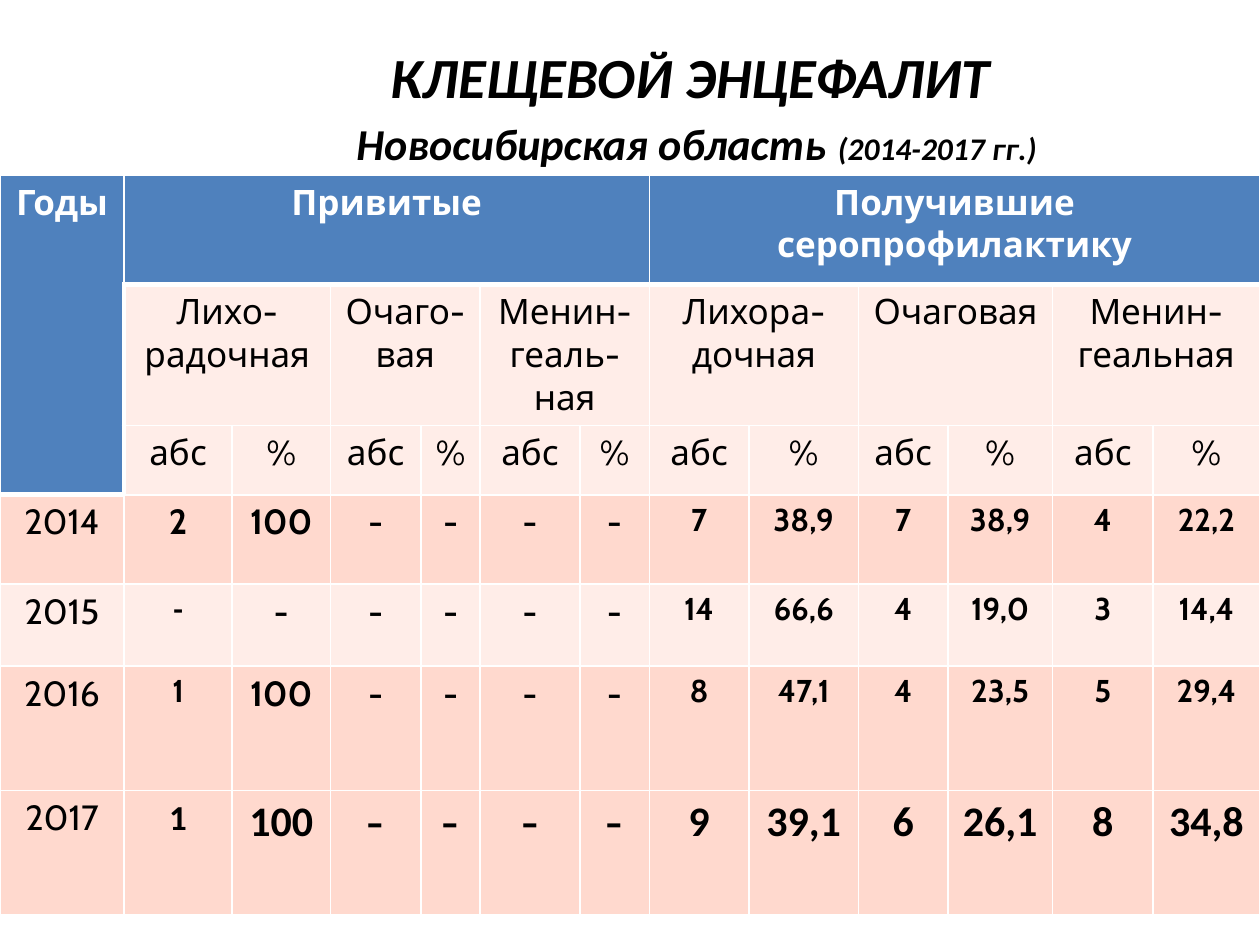
from lxml.etree import SubElement
from pptx import Presentation
from pptx.dml.color import RGBColor
from pptx.enum.text import MSO_ANCHOR, MSO_AUTO_SIZE, PP_ALIGN
from pptx.oxml.ns import qn
from pptx.util import Cm, Pt

# Content
TITLE_LINES = [
    [("КЛЕЩЕВОЙ ЭНЦЕФАЛИТ ", 32.4)],
    [("Новосибирская область", 25.2), (" ", 28.8), ("(2014-2017 гг.)", 18)],
]
YEAR_HEADING = "Годы"
GROUPS = [
    ("Привитые", ["Лихо-радочная", "Очаго-вая", "Менин-геаль-ная"]),
    ("Получившие серопрофилактику", ["Лихора-дочная", "Очаговая", "Менин-геальная"]),
]
MEASURES = ["абс", "%"]
YEARS = [
    ["2014", "2", "100", "-", "-", "-", "-", "7", "38,9", "7", "38,9", "4", "22,2"],
    ["2015", "-", "-", "-", "-", "-", "-", "14", "66,6", "4", "19,0", "3", "14,4"],
    ["2016", "1", "100", "-", "-", "-", "-", "8", "47,1", "4", "23,5", "5", "29,4"],
    ["2017", "1", "100", "-", "-", "-", "-", "9", "39,1", "6", "26,1", "8", "34,8"],
]

# Sizes in centimetres
COLUMN_WIDTHS = [2.5, 2.18, 1.98, 1.83, 1.19, 2.01, 1.4, 2.01, 2.21, 1.8, 2.11, 2.03, 2.15]
ROW_HEIGHTS = [2.21, 2.79, 1.4, 1.8, 1.65, 2.51, 2.51]
HEADER_ROWS = 3

# Style
BLUE = RGBColor(0x4F, 0x81, 0xBD)
PALE = RGBColor(0xFF, 0xED, 0xE8)
PINK = RGBColor(0xFF, 0xD9, 0xCE)
WHITE = RGBColor(0xFF, 0xFF, 0xFF)
BLACK = RGBColor(0, 0, 0)
YEAR_FILLS = [PINK, PALE, PINK, PINK]
TABLE_FONT, TITLE_FONT = "Cabin", "Calibri"
# Exceptions to the body style: (year, column) -> (font, size)
SPECIAL = {
    ("2015", 1): (TITLE_FONT, 18),
    ("2016", 1): (TABLE_FONT, 18),
    ("2017", 1): (TITLE_FONT, 20),
}


def format_run(run, font, size, color=BLACK, bold=False, italic=False):
    run.font.name = font
    run.font.size = Pt(size)
    run.font.color.rgb = color
    run.font.bold = bold
    run.font.italic = italic


def write_cell(cell, text, font=TABLE_FONT, size=20, color=BLACK, bold=False):
    cell.text_frame.text = text
    paragraph = cell.text_frame.paragraphs[0]
    paragraph.alignment = PP_ALIGN.CENTER
    format_run(paragraph.runs[0], font, size, color, bold)


def style_cell(cell, fill, left=1, top=1, bottom=1):
    properties = cell._tc.get_or_add_tcPr()
    for tag, width in (("a:lnL", left), ("a:lnR", 1), ("a:lnT", top), ("a:lnB", bottom)):
        line = SubElement(properties, qn(tag), w=str(Pt(width)))
        solid = SubElement(line, qn("a:solidFill"))
        SubElement(solid, qn("a:srgbClr"), val=str(WHITE))
    cell.fill.solid()
    cell.fill.fore_color.rgb = fill


def value_style(year, column, text):
    if (year, column) in SPECIAL:
        return SPECIAL[year, column]
    if year == "2017":
        return (TABLE_FONT if text == "-" else TITLE_FONT), 24
    return TABLE_FONT, 18 if column > 6 else 20


presentation = Presentation()
presentation.slide_width, presentation.slide_height = Cm(25.4), Cm(19.05)
slide = presentation.slides.add_slide(presentation.slide_layouts[5])

# Title
title = slide.shapes.title
title.left, title.top, title.width, title.height = Cm(2.69), Cm(0.76), Cm(22.71), Cm(2.77)
title.text_frame.auto_size = MSO_AUTO_SIZE.NONE
title.text_frame.vertical_anchor = MSO_ANCHOR.MIDDLE
paragraph = title.text_frame.paragraphs[0]
paragraph.alignment = PP_ALIGN.CENTER
for index, line in enumerate(TITLE_LINES):
    if index:
        paragraph.add_line_break()
    for text, size in line:
        run = paragraph.add_run()
        run.text = text
        format_run(run, TITLE_FONT, size, bold=True, italic=True)

# Table grid
table = slide.shapes.add_table(
    len(ROW_HEIGHTS), len(COLUMN_WIDTHS), 0, Cm(3.53),
    Cm(sum(COLUMN_WIDTHS)), Cm(sum(ROW_HEIGHTS))).table
for column, width in zip(table.columns, COLUMN_WIDTHS):
    column.width = Cm(width)
for row, height in zip(table.rows, ROW_HEIGHTS):
    row.height = Cm(height)

# Fills and borders
for row in range(len(ROW_HEIGHTS)):
    for column in range(len(COLUMN_WIDTHS)):
        cell = table.cell(row, column)
        if row >= HEADER_ROWS:
            under_heading = row == HEADER_ROWS and column == 0
            style_cell(cell, YEAR_FILLS[row - HEADER_ROWS], top=3 if under_heading else 1)
        elif row == 0 or column == 0:
            style_cell(cell, BLUE, bottom=3)
        else:
            style_cell(cell, PALE, left=3 if column == 1 else 1, top=3 if row == 1 else 1)

# Headings
table.cell(0, 0).merge(table.cell(HEADER_ROWS - 1, 0))
write_cell(table.cell(0, 0), YEAR_HEADING, color=WHITE, bold=True)
column = 1
for group, forms in GROUPS:
    group_cell = table.cell(0, column)
    group_cell.merge(table.cell(0, column + len(forms) * len(MEASURES) - 1))
    write_cell(group_cell, group, color=WHITE, bold=True)
    for form in forms:
        form_cell = table.cell(1, column)
        form_cell.merge(table.cell(1, column + len(MEASURES) - 1))
        write_cell(form_cell, form)
        for measure in MEASURES:
            write_cell(table.cell(2, column), measure)
            column += 1

# Yearly values
for row, values in enumerate(YEARS, HEADER_ROWS):
    year = values[0]
    write_cell(table.cell(row, 0), year)
    for column, text in enumerate(values[1:], 1):
        font, size = value_style(year, column, text)
        write_cell(table.cell(row, column), text, font, size, bold=True)

presentation.save("out.pptx")
